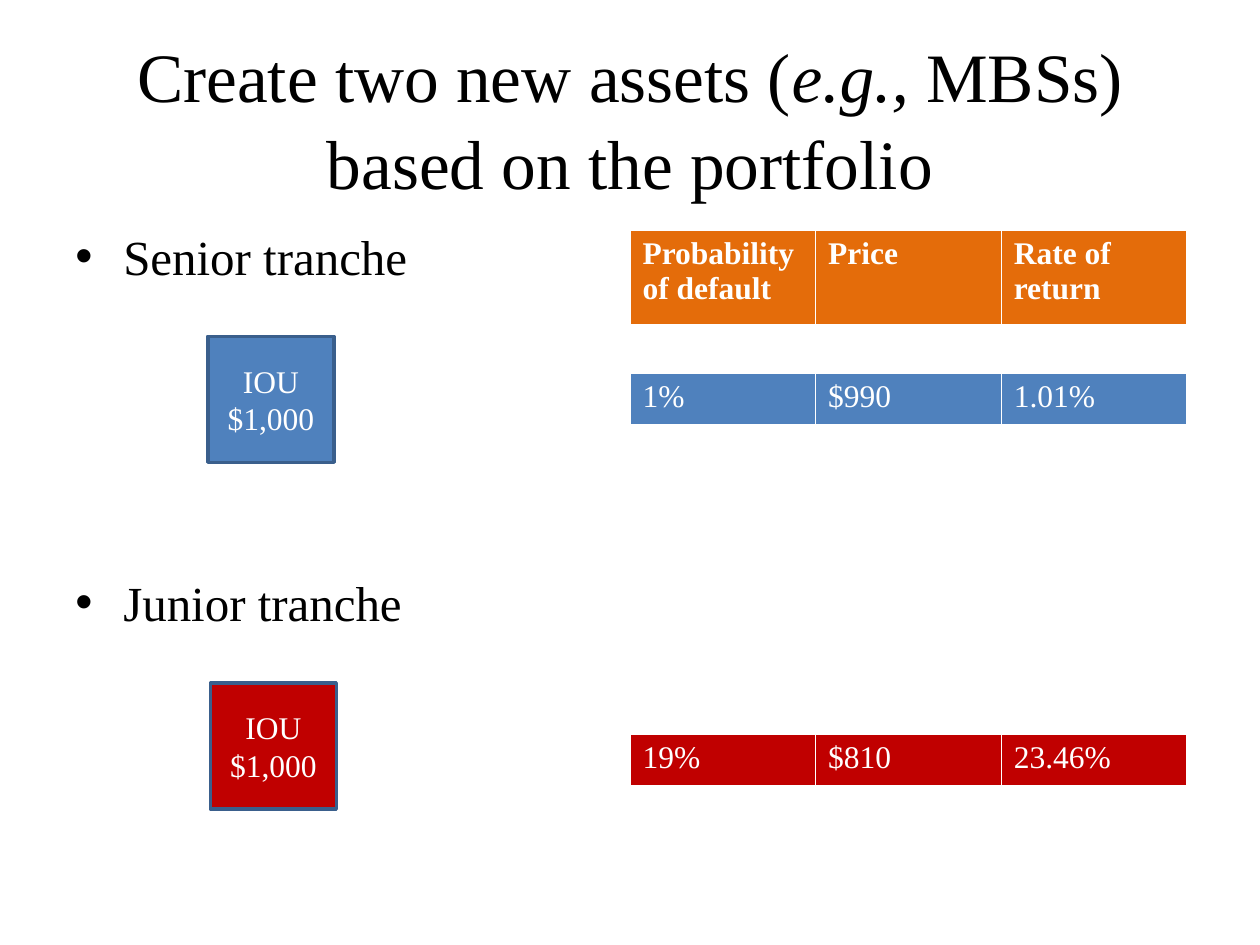
"""Build the slide comparing the senior and junior tranches."""
from lxml import etree
from pptx import Presentation, util as u
from pptx.dml import color
from pptx.enum import shapes, text
from pptx.oxml import ns

FONT = "Times New Roman"


def paint(fill, tint):
    fill.solid()
    fill.fore_color.rgb = color.RGBColor.from_string(tint)


def style(para, size, tint, bold=False):
    for run in para.runs:
        run.font.name, run.font.size, run.font.bold = FONT, u.Pt(size), bold
        paint(run.font.fill, tint)


deck = Presentation()
deck.slide_width, deck.slide_height = u.Inches(10), u.Inches(7.5)
wide, high = deck.slide_width, deck.slide_height
slide = deck.slides.add_slide(deck.slide_layouts[5])

title = slide.shapes.title
title.left, title.top = int(wide * 0.05), int(high * 0.04)
title.width, title.height = int(wide * 0.9), int(high / 6)
frame = title.text_frame
frame.auto_size = text.MSO_AUTO_SIZE.NONE
frame.vertical_anchor = text.MSO_ANCHOR.MIDDLE
para = frame.paragraphs[0]
para.alignment = text.PP_ALIGN.CENTER
para.line_spacing = 1.04
for part in ("Create two new assets (", "e.g., ", "MBSs) based on the portfolio"):
    run = para.add_run()
    run.text = part
    run.font.italic = part == "e.g., "
style(para, 39.6, "000000")

box = slide.shapes.add_textbox(int(wide * 0.05), int(high * 0.233), int(wide * 0.442), int(high * 0.66))
frame = box.text_frame
frame.word_wrap = True
frame.text = "Senior tranche\nJunior tranche"
for para, gap in zip(frame.paragraphs, (4, 164)):
    style(para, 28, "000000")
    para.space_before = u.Pt(gap)
    props = para._p.get_or_add_pPr()
    props.set("marL", str(u.Inches(0.38)))
    props.set("indent", str(u.Inches(-0.38)))
    etree.SubElement(props, ns.qn("a:buFont")).set("typeface", "Arial")
    etree.SubElement(props, ns.qn("a:buChar")).set("char", "•")

rows = {
    0: ("E46C0A", "Probability of default", "Price", "Rate of return"),
    2: ("4F81BD", "1%", "$990", "1.01%"),
    9: ("C00000", "19%", "$810", "23.46%"),
}
blank = ("FFFFFF", "", "", "")
tall = [0.75, 0.38] + [0.41] * 8
grid = slide.shapes.add_table(
    len(tall), 3, int(wide / 2), int(high * 0.244), int(wide * 0.442), u.Inches(sum(tall))
).table
for r, size in enumerate(tall):
    grid.rows[r].height = u.Inches(size)
    tint, *words = rows.get(r, blank)
    for c, word in enumerate(words):
        cell = grid.cell(r, c)
        paint(cell.fill, tint)
        cell.text_frame.text = word
        style(cell.text_frame.paragraphs[0], 18, "FFFFFF", r == 0)
        if not word:
            cell.margin_top = cell.margin_bottom = 0

for left, top, tint in ((0.165, 0.356, "4F81BD"), (0.167, 0.723, "C00000")):
    note = slide.shapes.add_shape(
        shapes.MSO_SHAPE.RECTANGLE, int(wide * left), int(high * top), u.Inches(1), u.Inches(1)
    )
    note.shadow.inherit = False
    paint(note.fill, tint)
    paint(note.line.fill, "3A5F8C")
    note.line.width = u.Pt(2)
    note.text_frame.vertical_anchor = text.MSO_ANCHOR.MIDDLE
    note.text_frame.text = "IOU\n$1,000"
    for para in note.text_frame.paragraphs:
        para.alignment = text.PP_ALIGN.CENTER
        style(para, 18, "FFFFFF")

deck.save("out.pptx")
